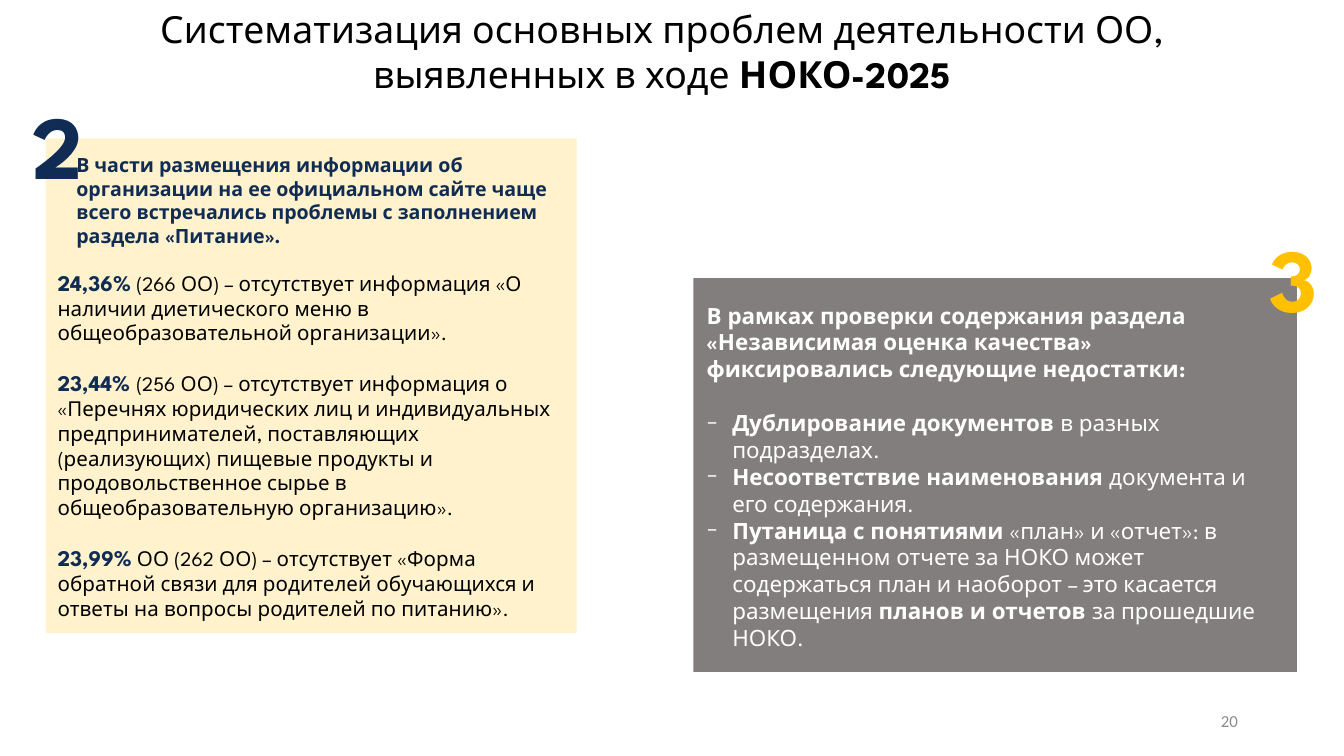
from dataclasses import dataclass

from lxml.etree import SubElement
from pptx import Presentation
from pptx.dml.color import RGBColor
from pptx.enum.shapes import MSO_SHAPE
from pptx.enum.text import MSO_ANCHOR, MSO_AUTO_SIZE, PP_ALIGN
from pptx.oxml.ns import qn
from pptx.util import Inches, Pt


@dataclass(frozen=True)
class Theme:
    font: str = "League Spartan"
    number_font: str = "Calibri"
    black: str = "000000"
    white: str = "FFFFFF"
    navy: str = "102C54"
    gold: str = "FFC000"
    cream: str = "FFF2CC"
    gray: str = "767171"
    page_gray: str = "8C8C8C"
    title: float = 20
    numeral: float = 48
    lead: float = 10.5
    share: float = 12
    detail: float = 11
    defect: float = 12
    page: float = 9


THEME = Theme()


def style(size, color, bold=False, font=THEME.font):
    return {"size": Pt(size), "name": font, "bold": bold, "color": color}


def apply_format(target, values):
    for attribute, value in values.items():
        if attribute == "color":
            target.color.rgb = RGBColor.from_string(value)
        else:
            setattr(target, attribute, value)


def add_panel(slide, box, color, opacity=100):
    panel = slide.shapes.add_shape(MSO_SHAPE.RECTANGLE, *map(Inches, box))
    panel.shadow.inherit = False
    panel.fill.solid()
    panel.fill.fore_color.rgb = RGBColor.from_string(color)
    panel.line.fill.background()
    if opacity < 100:
        tint = panel.fill._xPr.find(qn("a:solidFill"))[0]
        SubElement(tint, qn("a:alpha")).set("val", str(opacity * 1000))


def add_dash(paragraph):
    properties = paragraph._p.get_or_add_pPr()
    properties.set("marL", str(Inches(0.19)))
    properties.set("indent", str(-Inches(0.19)))
    SubElement(properties, qn("a:buFont")).set("typeface", THEME.number_font)
    SubElement(properties, qn("a:buChar")).set("char", "−")


def add_text(slide, box, paragraphs, align=PP_ALIGN.LEFT,
             anchor=MSO_ANCHOR.TOP, grow=True):
    """Each paragraph is (runs, space before in points, dashed)."""
    frame = slide.shapes.add_textbox(*map(Inches, box)).text_frame
    apply_format(frame, {
        "word_wrap": True,
        "vertical_anchor": anchor,
        "auto_size": MSO_AUTO_SIZE.SHAPE_TO_FIT_TEXT if grow else MSO_AUTO_SIZE.NONE,
    })
    for index, (runs, gap, dashed) in enumerate(paragraphs):
        paragraph = frame.add_paragraph() if index else frame.paragraphs[0]
        if dashed:
            add_dash(paragraph)
        paragraph.alignment = align
        if gap:
            paragraph.space_before = Pt(gap)
        for text, values in runs:
            run = paragraph.add_run()
            run.text = text
            apply_format(run.font, values)


def add_line(slide, box, runs, **layout):
    add_text(slide, box, [(runs, 0, False)], **layout)


def add_numeral(slide, left, top, digit, color):
    add_line(slide, (left, top, 0.39, 0.93),
             [(digit, style(THEME.numeral, color, True))], align=PP_ALIGN.CENTER)


def add_nutrition(slide):
    add_panel(slide, (0.34, 1.03, 3.95, 3.68), THEME.cream)
    add_line(slide, (0.47, 1.09, 3.82, 0.81), [(
        "В части размещения информации об организации на ее официальном сайте "
        "чаще всего встречались проблемы с заполнением раздела «Питание».",
        style(THEME.lead, THEME.navy, True))])
    add_numeral(slide, 0.14, 0.62, "2", THEME.navy)

    findings = [
        ("24,36%", " (266 ОО) – отсутствует информация «О наличии диетического "
                   "меню в общеобразовательной организации»."),
        ("23,44% ", "(256 ОО) – отсутствует информация о «Перечнях юридических лиц "
                    "и индивидуальных предпринимателей, поставляющих (реализующих) "
                    "пищевые продукты и продовольственное сырье в "
                    "общеобразовательную организацию»."),
        ("23,99%", " ОО (262 ОО) – отсутствует «Форма обратной связи для родителей "
                   "обучающихся и ответы на вопросы родителей по питанию»."),
    ]
    share_style = style(THEME.share, THEME.navy, True)
    detail_style = style(THEME.detail, THEME.black)
    add_text(slide, (0.33, 1.95, 3.96, 2.74), [
        ([(share, share_style), (detail, detail_style)], 13.2 if index else 0, False)
        for index, (share, detail) in enumerate(findings)])


def add_defects(slide):
    strong = style(THEME.defect, THEME.white, True)
    plain = style(THEME.defect, THEME.white)
    heading = ("В рамках проверки содержания раздела «Независимая оценка качества» "
               "фиксировались следующие недостатки:")
    defects = [
        [("Дублирование документов ", strong), ("в разных подразделах.", plain)],
        [("Несоответствие наименования ", strong),
         ("документа и его содержания.", plain)],
        [("Путаница с понятиями ", strong),
         ("«план» и «отчет»: в размещенном отчете за НОКО может содержаться план "
          "и наоборот – это касается размещения ", plain),
         ("планов и отчетов ", strong), ("за прошедшие НОКО.", plain)],
    ]
    add_panel(slide, (5.16, 2.07, 4.49, 2.93), THEME.gray, opacity=90)
    add_text(slide, (5.16, 2.18, 4.49, 2.73),
             [([(heading, strong)], 0, False)]
             + [(runs, 0 if index else 14.4, True)
                for index, runs in enumerate(defects)],
             anchor=MSO_ANCHOR.MIDDLE)
    add_numeral(slide, 9.35, 1.61, "3", THEME.gold)


def main():
    # Widescreen page, 16:9
    deck = Presentation()
    deck.slide_width = Inches(10)
    deck.slide_height = deck.slide_width * 9 // 16
    slide = deck.slides.add_slide(deck.slide_layouts[6])

    # Title
    add_line(slide, (0.3, 0, 9.25, 0.77), [
        ("Систематизация основных проблем деятельности ОО, выявленных в ходе ",
         style(THEME.title, THEME.black)),
        ("НОКО-2025", style(THEME.title, THEME.black, True)),
    ], align=PP_ALIGN.CENTER)

    # Page number
    add_line(slide, (7.06, 5.21, 2.25, 0.3),
             [("20", style(THEME.page, THEME.page_gray, font=THEME.number_font))],
             align=PP_ALIGN.RIGHT, anchor=MSO_ANCHOR.MIDDLE, grow=False)

    # Problem panels
    add_nutrition(slide)
    add_defects(slide)

    deck.save("out.pptx")


if __name__ == "__main__":
    main()
